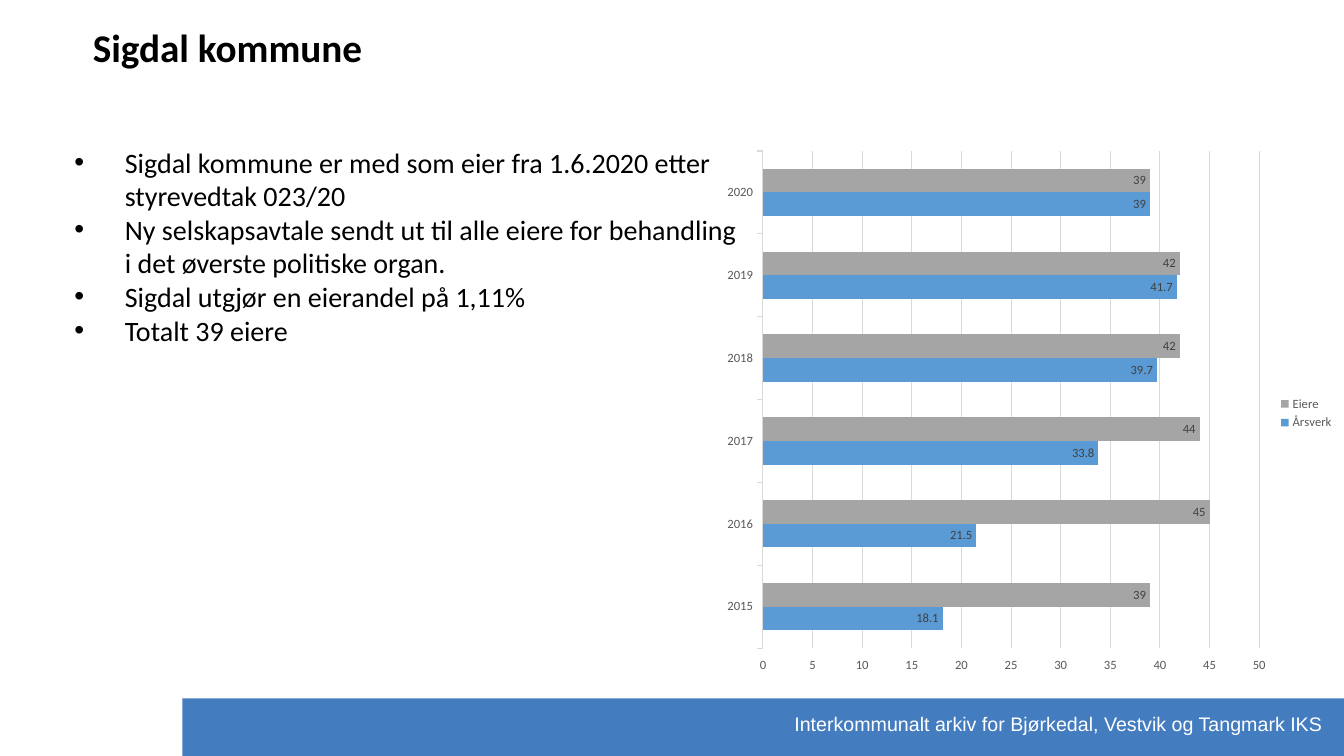
"""Build the Sigdal kommune slide with ownership facts and a bar chart."""
from dataclasses import dataclass

from lxml import etree
from pptx import Presentation
from pptx import util as u
from pptx.chart import data as chart_data
from pptx.dml import color
from pptx.enum import chart as ch
from pptx.enum import shapes, text
from pptx.oxml import ns, parse_xml

Box = tuple[float, float, float, float]


@dataclass(frozen=True)
class Series:
    name: str
    values: tuple[float, ...]
    fill: str


YEARS = ("2015", "2016", "2017", "2018", "2019", "2020")
SERIES = (
    Series("Årsverk", (18.1, 21.5, 33.8, 39.7, 41.7, 39), "5B9BD5"),
    Series("Eiere", (39, 45, 44, 42, 42, 39), "A5A5A5"),
)
FACTS = (
    "Sigdal kommune er med som eier fra 1.6.2020 etter styrevedtak 023/20",
    "Ny selskapsavtale sendt ut til alle eiere for behandling i det øverste politiske organ.",
    "Sigdal utgjør en eierandel på 1,11%",
    "Totalt 39 eiere",
)
FOOTER = "Interkommunalt arkiv for Bjørkedal, Vestvik og Tangmark IKS"
PLOT_AREA = {"x": 0.075, "y": 0.02, "w": 0.79, "h": 0.91}


def rgb(value: str) -> color.RGBColor:
    return color.RGBColor.from_string(value)


def inches(box: Box) -> list[u.Length]:
    return [u.Inches(length) for length in box]


def set_font(font, size: float, fill: str, name: str = "Calibri", bold: bool = False) -> None:
    font.name, font.size, font.bold = name, u.Pt(size), bold
    font.color.rgb = rgb(fill)


def add_bullet(para) -> None:
    props = para._p.get_or_add_pPr()
    indent = u.Inches(0.5)
    props.set("marL", str(indent))
    props.set("indent", str(-indent))
    etree.SubElement(props, ns.qn("a:buFont")).set("typeface", "Arial")
    etree.SubElement(props, ns.qn("a:buChar")).set("char", "•")


def write(shape, *lines: str, size: float, fill: str, name: str = "Calibri",
          bold: bool = False, bullets: bool = False, wrap: bool = True) -> None:
    frame = shape.text_frame
    frame.word_wrap = wrap
    frame.auto_size = text.MSO_AUTO_SIZE.NONE
    frame.vertical_anchor = text.MSO_ANCHOR.TOP
    for index, line in enumerate(lines):
        para = frame.paragraphs[0] if index == 0 else frame.add_paragraph()
        para.alignment = text.PP_ALIGN.LEFT
        if bullets:
            add_bullet(para)
        span = para.add_run()
        span.text = line
        set_font(span.font, size, fill, name, bold)


def add_band(page, box: Box, fill: str) -> None:
    band = page.shapes.add_shape(shapes.MSO_SHAPE.RECTANGLE, *inches(box))
    band.shadow.inherit = False
    band.fill.solid()
    band.fill.fore_color.rgb = rgb(fill)
    band.line.fill.background()


def style_line(line, fill: str) -> None:
    line.color.rgb = rgb(fill)
    line.width = u.Pt(0.75)


def place_plot(chart) -> None:
    plot_area = chart._chartSpace.chart.plotArea
    for old in plot_area.findall(ns.qn("c:layout")):
        plot_area.remove(old)
    sizes = "".join(f'<c:{key} val="{value}"/>' for key, value in PLOT_AREA.items())
    plot_area.insert(0, parse_xml(
        f'<c:layout {ns.nsdecls("c")}><c:manualLayout><c:layoutTarget val="inner"/>'
        f'<c:xMode val="edge"/><c:yMode val="edge"/>{sizes}</c:manualLayout></c:layout>'))


def add_bars(page, box: Box) -> None:
    values = chart_data.CategoryChartData(number_format="General")
    values.categories = YEARS
    for item in SERIES:
        values.add_series(item.name, item.values)
    chart = page.shapes.add_chart(ch.XL_CHART_TYPE.BAR_CLUSTERED, *inches(box), values).chart
    set_font(chart.font, 10, "000000")
    chart.has_title = False
    chart.has_legend = True
    chart.legend.position = ch.XL_LEGEND_POSITION.RIGHT
    chart.legend.include_in_layout = False
    set_font(chart.legend.font, 9, "595959")

    plot = chart.plots[0]
    plot.gap_width, plot.overlap, plot.vary_by_categories = 150, 0, False
    for series, item in zip(plot.series, SERIES):
        series.format.fill.solid()
        series.format.fill.fore_color.rgb = rgb(item.fill)
        labels = series.data_labels
        labels.show_value = True
        labels.position = ch.XL_LABEL_POSITION.INSIDE_END
        set_font(labels.font, 9, "404040")

    for axis in (chart.category_axis, chart.value_axis):
        axis.major_tick_mark = ch.XL_TICK_MARK.OUTSIDE
        axis.minor_tick_mark = ch.XL_TICK_MARK.NONE
        set_font(axis.tick_labels.font, 9, "595959")
    style_line(chart.category_axis.format.line, "D9D9D9")
    scale = chart.value_axis
    scale.minimum_scale, scale.maximum_scale, scale.major_unit = 0, 50, 5
    scale.format.line.fill.background()
    scale.has_major_gridlines = True
    style_line(scale.major_gridlines.format.line, "D9D9D9")
    place_plot(chart)


def main() -> None:
    deck = Presentation()
    deck.slide_width, deck.slide_height = u.Inches(13.33), u.Inches(7.5)
    page = deck.slides.add_slide(deck.slide_layouts.get_by_name("Title Only"))

    add_band(page, (1.81, 6.93, 11.52, 0.57), "447CC0")
    footer = page.shapes.add_textbox(*inches((7.78, 7.01, 5.48, 0.34)))
    write(footer, FOOTER, size=14, fill="FFFFFF", name="Arial", wrap=False)
    facts = page.shapes.add_textbox(*inches((0.64, 1.39, 6.87, 3.47)))
    write(facts, *FACTS, size=20, fill="000000", bullets=True)
    title = page.shapes.title
    title.left, title.top, title.width, title.height = inches((0.82, 0.18, 12.18, 0.57))
    write(title, "Sigdal kommune", size=28, fill="000000", bold=True)
    add_bars(page, (7.1, 1.39, 6.23, 5.42))

    deck.save("out.pptx")


if __name__ == "__main__":
    main()
